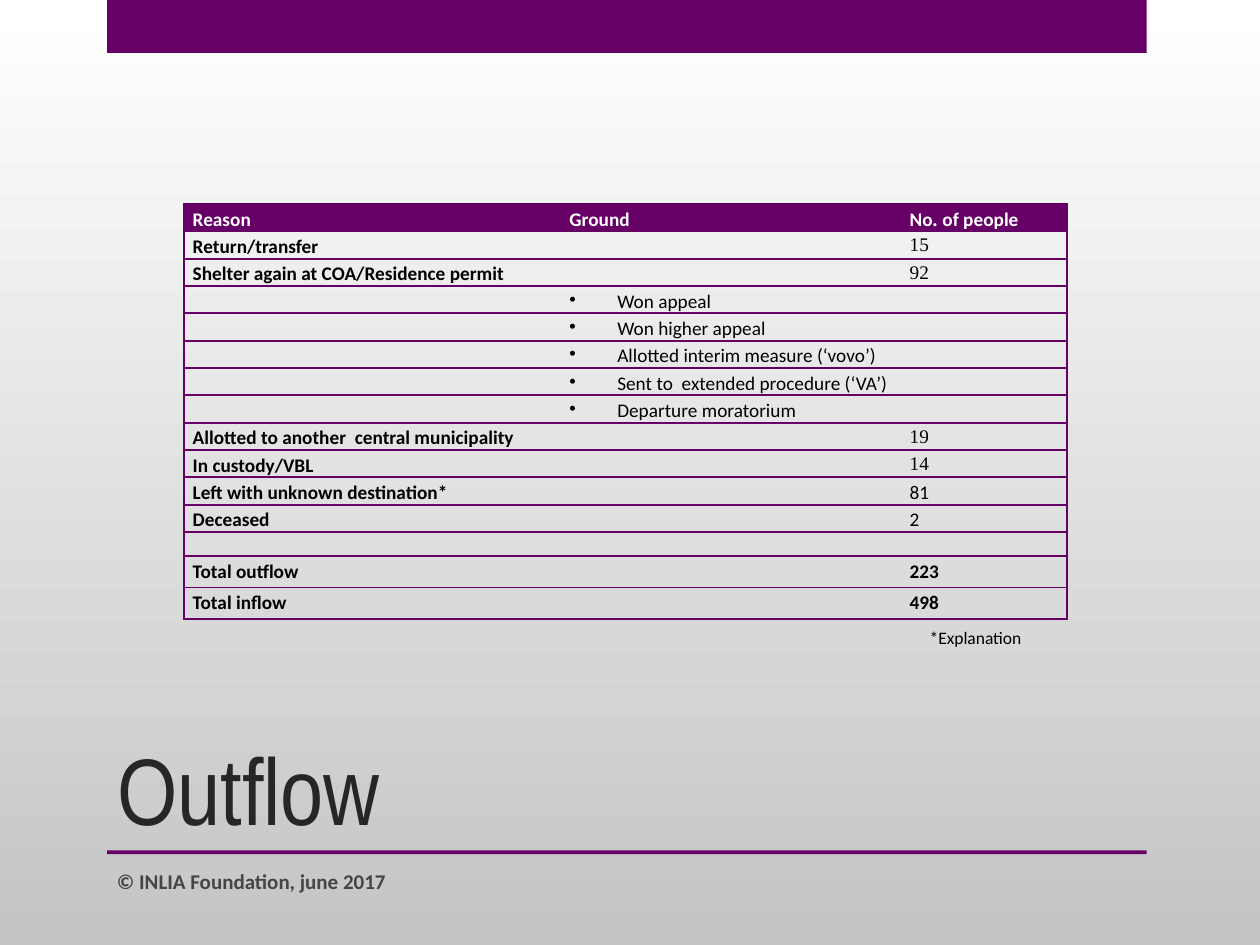
import pptx
import pptx.dml.color
import pptx.enum.shapes
import pptx.enum.text
import pptx.oxml.ns
import pptx.util
from lxml import etree

Inches, Pt = pptx.util.Inches, pptx.util.Pt
RGBColor = pptx.dml.color.RGBColor
ANCHOR = pptx.enum.text.MSO_ANCHOR
qn = pptx.oxml.ns.qn

PURPLE = RGBColor(0x66, 0x00, 0x66)
WHITE = RGBColor(0xFF, 0xFF, 0xFF)
BLACK = RGBColor(0, 0, 0)
BACKDROP_END = RGBColor(0xC5, 0xC5, 0xC5)
TITLE_INK = RGBColor(0x26, 0x26, 0x26)
FOOTER_INK = RGBColor(0x45, 0x45, 0x45)
SANS, SERIF = "Calibri", "Times New Roman"

TITLE = "Outflow"
COPYRIGHT = "© INLIA Foundation, june 2017"
FOOTNOTE = "*Explanation"

HEADER = ("Reason", "Ground", "No. of people")
# reason, ground, number of people
ROWS = [
    ("Return/transfer", "", "15"),
    ("Shelter again at COA/Residence permit", "", "92"),
    ("", "Won appeal", ""),
    ("", "Won higher appeal", ""),
    ("", "Allotted interim measure (‘vovo’)", ""),
    ("", "Sent to  extended procedure (‘VA’)", ""),
    ("", "Departure moratorium", ""),
    ("Allotted to another  central municipality", "", "19"),
    ("In custody/VBL", "", "14"),
    ("Left with unknown destination*", "", "81"),
    ("Deceased", "", "2"),
    ("", "", ""),
    ("Total outflow", "", "223"),
    ("Total inflow", "", "498"),
]
SERIF_NUMBERS = {"15", "92", "19", "14"}
COLUMN_WIDTHS = (2.99, 2.7, 1.32)
HEADER_HEIGHT, ROW_HEIGHT, TOTAL_HEIGHT = 0.21, 0.19, 0.25


def add_run(paragraph, text, size, color, font=SANS, bold=False):
    run = paragraph.add_run()
    run.text = text
    run.font.size = Pt(size)
    run.font.name = font
    run.font.bold = bold
    run.font.color.rgb = color


def add_bar(slide, top, height):
    bar = slide.shapes.add_shape(pptx.enum.shapes.MSO_SHAPE.RECTANGLE,
                                 Inches(0.85), Inches(top), Inches(8.25), Inches(height))
    bar.shadow.inherit = False
    bar.fill.solid()
    bar.fill.fore_color.rgb = PURPLE
    bar.line.fill.background()


def add_label(slide, box, text, anchor, size, color, bold=False):
    label = slide.shapes.add_textbox(*map(Inches, box))
    label.text_frame.word_wrap = True
    label.text_frame.vertical_anchor = anchor
    add_run(label.text_frame.paragraphs[0], text, size, color, bold=bold)


def set_borders(cell, ruled_sides):
    """Rule the given sides of a cell and blank out the others."""
    for side in "LRTB":
        line = etree.SubElement(cell._tc.get_or_add_tcPr(), qn(f"a:ln{side}"), w=str(Pt(1.25)))
        if side in ruled_sides:
            fill = etree.SubElement(line, qn("a:solidFill"))
            etree.SubElement(fill, qn("a:srgbClr"), val=str(PURPLE))
        else:
            etree.SubElement(line, qn("a:noFill"))


def add_bullet(paragraph):
    properties = paragraph._p.get_or_add_pPr()
    properties.set("marL", str(Inches(0.38)))
    properties.set("indent", str(-Inches(0.38)))
    etree.SubElement(properties, qn("a:buChar"), char="•")


def fill_cell(cell, text, row, column):
    set_borders(cell, "TB" + {0: "L", 2: "R"}.get(column, ""))
    cell.margin_left = cell.margin_right = Inches(0.07)
    cell.margin_top = cell.margin_bottom = 0
    if row == 0:
        cell.fill.solid()
        cell.fill.fore_color.rgb = PURPLE
    else:
        cell.fill.background()
    paragraph = cell.text_frame.paragraphs[0]
    if not text:
        etree.SubElement(paragraph._p, qn("a:endParaRPr"), sz="1100")
        return
    paragraph.line_spacing = 1.15
    if row == 0:
        before, stop, after = text.partition(". ")
        for part, font in ((before, SANS), (stop, SERIF), (after, SANS)):
            if part:
                add_run(paragraph, part, 11, WHITE, font, True)
        return
    if column == 1:
        add_bullet(paragraph)
    is_total = row > len(ROWS) - 2
    add_run(paragraph, text, 11, BLACK, SERIF if text in SERIF_NUMBERS else SANS,
            bold=column == 0 or is_total)


def add_outflow_table(slide):
    heights = [HEADER_HEIGHT] + [ROW_HEIGHT] * (len(ROWS) - 2) + [TOTAL_HEIGHT] * 2
    table = slide.shapes.add_table(len(heights), len(COLUMN_WIDTHS), Inches(1.46), Inches(1.62),
                                   Inches(sum(COLUMN_WIDTHS)), Inches(sum(heights))).table
    table.first_row = table.horz_banding = False
    for column, width in zip(table.columns, COLUMN_WIDTHS):
        column.width = Inches(width)
    for r, (height, texts) in enumerate(zip(heights, [HEADER] + ROWS)):
        table.rows[r].height = Inches(height)
        for c, text in enumerate(texts):
            fill_cell(table.cell(r, c), text, r, c)


def main():
    deck = pptx.Presentation()
    deck.slide_width, deck.slide_height = Inches(10), Inches(7.5)
    slide = deck.slides.add_slide(deck.slide_layouts.get_by_name("Title Only"))

    backdrop = slide.background.fill
    backdrop.gradient()
    backdrop.gradient_angle = 270
    for stop, color in zip(backdrop.gradient_stops, (WHITE, BACKDROP_END)):
        stop.color.rgb = color

    add_bar(slide, 0, 0.42)
    add_bar(slide, 6.75, 0.03)

    title = slide.shapes.title
    title.left, title.top, title.width, title.height = map(Inches, (0.83, 5, 7.42, 1.75))
    title.text_frame.vertical_anchor = ANCHOR.BOTTOM
    heading = title.text_frame.paragraphs[0]
    heading.alignment = pptx.enum.text.PP_ALIGN.LEFT
    add_run(heading, TITLE, 54, TITLE_INK, "Arial Narrow")

    add_outflow_table(slide)
    add_label(slide, (0.83, 6.79, 5.33, 0.4), COPYRIGHT, ANCHOR.MIDDLE, 12, FOOTER_INK, True)
    add_label(slide, (7.28, 4.93, 1.26, 0.27), FOOTNOTE, ANCHOR.TOP, 10, BLACK)
    deck.save("out.pptx")


if __name__ == "__main__":
    main()
